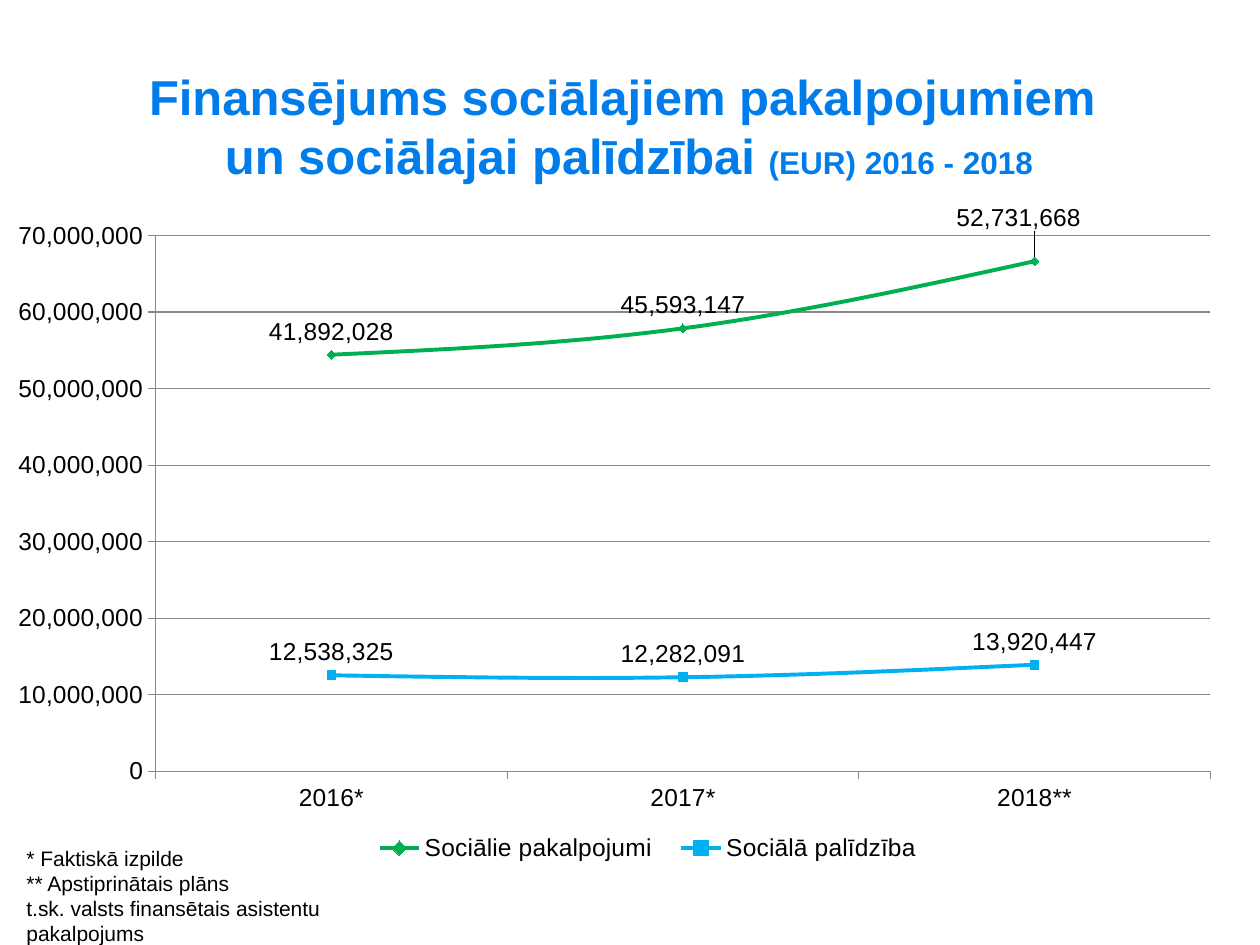
from lxml import etree
from pptx import Presentation
from pptx.chart.data import CategoryChartData
from pptx.dml.color import RGBColor
from pptx.enum.chart import XL_CHART_TYPE as ChartType
from pptx.enum.chart import XL_LABEL_POSITION as LabelPos
from pptx.enum.chart import XL_LEGEND_POSITION as LegendPos
from pptx.enum.chart import XL_MARKER_STYLE as Marker
from pptx.enum.chart import XL_TICK_MARK as Tick
from pptx.enum.text import MSO_ANCHOR as Anchor
from pptx.enum.text import PP_ALIGN as Align
from pptx.oxml.ns import qn
from pptx.util import Pt

EMU_PER_PX = 914400 / 126
FONT = "Arial"
NUMBER = "#,##0"
BLACK = RGBColor(0x00, 0x00, 0x00)
TITLE_BLUE = RGBColor(0x00, 0x7D, 0xEA)
AID_BLUE = RGBColor(0x00, 0xB0, 0xF0)
SERVICE_GREEN = RGBColor(0x00, 0xB0, 0x50)
GRID_GREY = RGBColor(0x87, 0x87, 0x87)

YEARS = ["2016*", "2017*", "2018**"]
# name, values, colour, marker
SERIES = [
    ("Sociālā palīdzība", (12538325, 12282091, 13920447), AID_BLUE, Marker.SQUARE),
    ("Sociālie pakalpojumi", (41892028, 45593147, 52731668), SERVICE_GREEN, Marker.DIAMOND),
]
TITLE = [
    ("Finansējums sociālajiem pakalpojumiem \vun sociālajai palīdzībai ", 28),
    ("(EUR) 2016 - 2018", 18),
]
NOTES = [
    "* Faktiskā izpilde",
    "** Apstiprinātais plāns",
    "t.sk. valsts finansētais asistentu pakalpojums",
]


def px(*lengths):
    return [round(length * EMU_PER_PX) for length in lengths]


def set_font(font, size, color=BLACK, bold=False):
    values = {"name": FONT, "size": Pt(size), "bold": bold}
    for name, value in values.items():
        setattr(font, name, value)
    font.color.rgb = color


def add_text(slide, box, paragraphs, color, bold=False, align=Align.LEFT, anchor=Anchor.TOP):
    frame = slide.shapes.add_textbox(*px(*box)).text_frame
    frame.word_wrap = True
    frame.vertical_anchor = anchor
    for index, runs in enumerate(paragraphs):
        paragraph = frame.paragraphs[0] if index == 0 else frame.add_paragraph()
        paragraph.alignment = align
        for text, size in runs:
            # Line breaks split a run into parts of one format
            for part_index, part in enumerate(text.split("\v")):
                if part_index:
                    paragraph.add_line_break()
                run = paragraph.add_run()
                run.text = part
                set_font(run.font, size, color, bold)


def make_layout(**values):
    layout = etree.Element(qn("c:layout"))
    manual = etree.SubElement(layout, qn("c:manualLayout"))
    for name, value in values.items():
        etree.SubElement(manual, qn(f"c:{name}")).set("val", str(value))
    return layout


def place_plot(chart):
    plot_area = chart.plots[0]._element.getparent()
    for old in plot_area.findall(qn("c:layout")):
        plot_area.remove(old)
    plot_area.insert(0, make_layout(layoutTarget="inner", xMode="edge", yMode="edge",
                                    x=0.115, y=0.125, w=0.857, h=0.739))


def add_legend(chart):
    chart.has_legend = True
    legend = chart.legend
    legend.position = LegendPos.RIGHT
    legend.include_in_layout = False
    set_font(legend.font, 14)
    for old in legend._element.findall(qn("c:layout")):
        legend._element.remove(old)
    legend._element.find(qn("c:legendPos")).addnext(
        make_layout(xMode="edge", yMode="edge", x=0.28, y=0.945, w=0.47, h=0.05))


def style_axes(chart):
    for axis in (chart.category_axis, chart.value_axis):
        axis.major_tick_mark = Tick.OUTSIDE
        axis.minor_tick_mark = Tick.NONE
        axis.format.line.color.rgb = GRID_GREY
        axis.format.line.width = Pt(0.75)
        set_font(axis.tick_labels.font, 14)
    amounts = chart.value_axis
    amounts.minimum_scale, amounts.maximum_scale = 0, 70_000_000
    amounts.major_unit = 10_000_000
    amounts.tick_labels.number_format = NUMBER
    amounts.tick_labels.number_format_is_linked = False
    amounts.has_major_gridlines = True
    amounts.major_gridlines.format.line.color.rgb = GRID_GREY
    amounts.major_gridlines.format.line.width = Pt(0.75)


def style_series(series, color, marker):
    series.smooth = True
    series.format.line.color.rgb = color
    series.format.line.width = Pt(2.25)
    series.marker.style = marker
    series.marker.size = 5
    for part in (series.marker.format.fill, series.marker.format.line.fill):
        part.solid()
        part.fore_color.rgb = color
    labels = series.data_labels
    values = {"show_value": True, "position": LabelPos.ABOVE,
              "number_format": NUMBER, "number_format_is_linked": False}
    for name, value in values.items():
        setattr(labels, name, value)
    set_font(labels.font, 14)


def shift_label(series, index, x, y):
    label = series.points[index].data_label
    label.position = LabelPos.ABOVE
    set_font(label.font, 14)
    element = series.data_labels._element.find(qn("c:dLbl"))
    layout = make_layout(x=x, y=y)
    element.find(qn("c:idx")).addnext(layout)
    number = etree.Element(qn("c:numFmt"), formatCode=NUMBER, sourceLinked="0")
    layout.addnext(number)


def add_funding_chart(slide):
    data = CategoryChartData(number_format=NUMBER)
    data.categories = YEARS
    for name, values, _, _ in SERIES:
        data.add_series(name, values)
    chart = slide.shapes.add_chart(
        ChartType.LINE_MARKERS_STACKED, *px(14, 145, 1231, 725), data).chart
    set_font(chart.font, 14)
    chart.has_title = False
    chart.plots[0].vary_by_categories = False
    style_axes(chart)
    for series, (_, _, color, marker) in zip(chart.plots[0].series, SERIES):
        style_series(series, color, marker)
    # The last services label sits up and left of its point
    shift_label(chart.plots[0].series[1], 2, -0.013, -0.028)
    place_plot(chart)
    add_legend(chart)


def main():
    deck = Presentation()
    deck.slide_width, deck.slide_height = px(1260, 945)
    slide = deck.slides.add_slide(deck.slide_layouts[6])
    # Title
    add_text(slide, (123, 66, 1012, 118), [TITLE], TITLE_BLUE,
             bold=True, align=Align.CENTER, anchor=Anchor.MIDDLE)
    # Footnotes
    add_text(slide, (14, 839, 437, 89), [[(note, 12)] for note in NOTES], BLACK)
    # Funding by year
    add_funding_chart(slide)
    deck.save("out.pptx")


if __name__ == "__main__":
    main()
